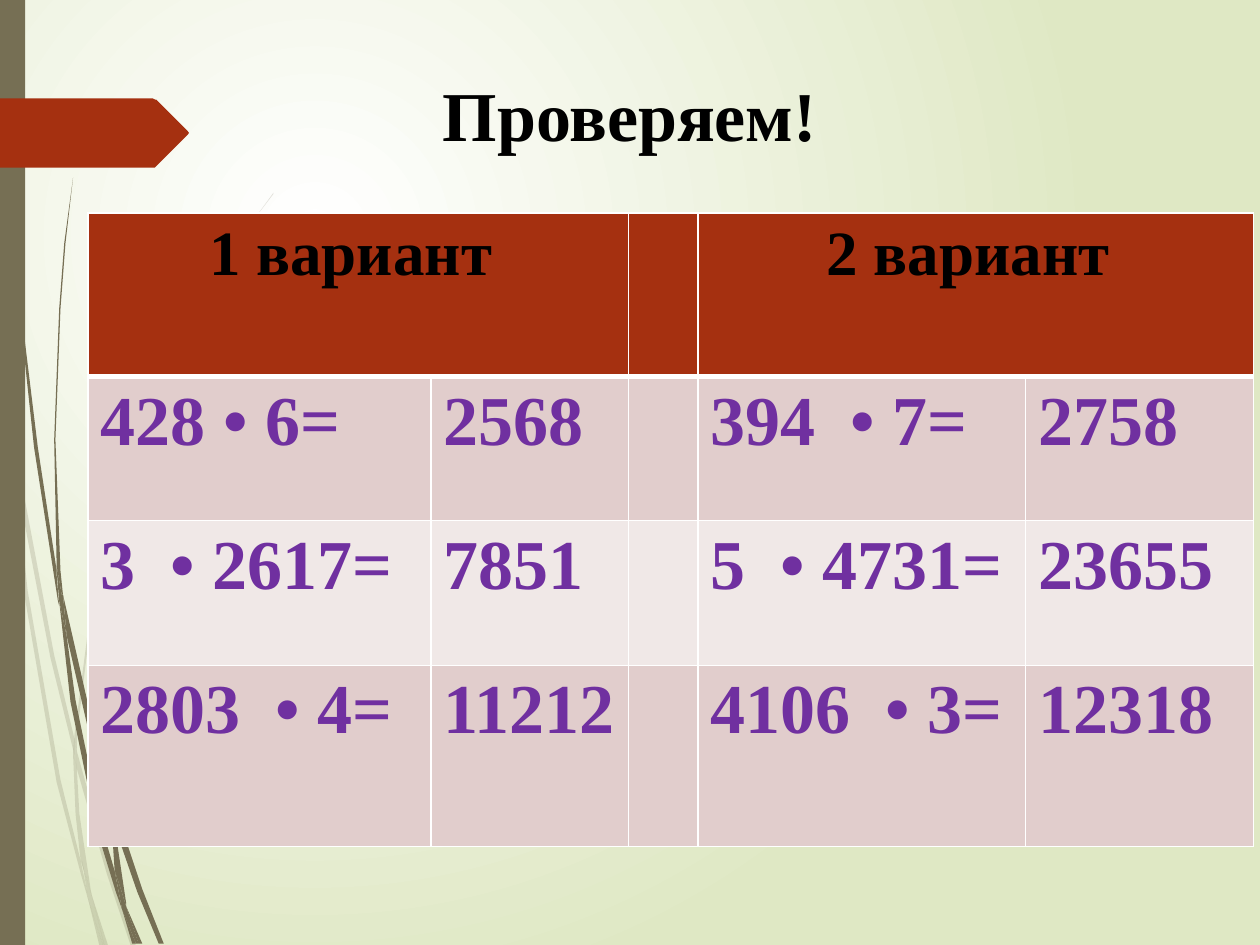
from dataclasses import dataclass

from lxml import etree
from pptx import Presentation
from pptx.dml.color import RGBColor
from pptx.enum.shapes import MSO_SHAPE
from pptx.enum.text import PP_ALIGN
from pptx.oxml.ns import qn
from pptx.util import Inches, Pt

RECTANGLE = MSO_SHAPE.RECTANGLE
CENTER = PP_ALIGN.CENTER
LEFT = PP_ALIGN.LEFT

FONT = "Times New Roman"
WHITE = "FFFFFF"
BLACK = "000000"
PALE_GREEN = "DFE8C4"
OLIVE = "766F54"
RUST = "A53010"
PURPLE = "7030A0"
BANDS = ("E1CDCC", "F0E8E7")


@dataclass(frozen=True)
class Outline:
    points: tuple
    color: str = OLIVE
    opacity: int = 100


@dataclass(frozen=True)
class Answer:
    task: str
    result: str


PALE_STEMS = (
    ((0.08, 3.5), (0.06, 3.22), (0, 2.82), (0, 2.99), (0.07, 3.44)),
    ((0.4, 5.22), (0.59, 5.99), (0.59, 5.86), (0.43, 5.2), (0.1, 3.45), (0.12, 3.76)),
    ((0.64, 6.07), (0.61, 5.96), (0.61, 6.1), (0.85, 6.94), (1.04, 7.51), (1.08, 7.51),
     (0.88, 6.92)),
    ((0.83, 7.51), (0.86, 7.51), (0.73, 7.11)),
    ((0.64, 6.83), (0.48, 6.19), (0.22, 4.69), (0.12, 3.76), (0.08, 3.5), (0.19, 4.7),
     (0.45, 6.21), (0.64, 6.93), (0.7, 7.14), (0.69, 7.07)),
    ((0.58, 5.99), (0.6, 6.46), (0.64, 6.83), (0.67, 6.92), (0.73, 7.11), (0.72, 7.06),
     (0.63, 6.46), (0.61, 6.1), (0.61, 6.08)),
    ((0.61, 5.84), (0.76, 4.62), (1.11, 3.49), (1.59, 2.45), (1.87, 1.98), (2.01, 1.75),
     (2.17, 1.54), (2.17, 1.53), (2.01, 1.75), (1.86, 1.97), (1.58, 2.44), (1.1, 3.48),
     (0.75, 4.61), (0.59, 5.84), (0.59, 5.86), (0.61, 5.96)),
    ((0.7, 7.14), (0.79, 7.51), (0.82, 7.51)),
    ((0.61, 6.08), (0.61, 6.1), (0.61, 5.96), (0.59, 5.86), (0.58, 5.99)),
    ((0.67, 6.92), (0.65, 6.83), (0.69, 7.07), (0.7, 7.14), (0.82, 7.51), (0.83, 7.51),
     (0.73, 7.11)),
)

DARK_STEMS = (
    ((0.05, 1.1), (0.14, 2.33), (0.27, 3.55), (0.46, 4.77), (0.47, 4.81), (0.45, 4.57),
     (0.45, 4.53), (0.3, 3.55), (0.15, 2.32), (0.06, 1.09), (0.04, 0.48), (0.03, 0),
     (0.02, 0), (0.03, 0.48)),
    ((0.73, 5.92), (0.88, 6.45), (0.88, 6.33), (0.88, 6.31), (0.77, 5.9), (0.5, 4.72),
     (0.53, 5.05)),
    ((0.94, 6.49), (0.91, 6.41), (0.91, 6.56), (1.09, 7.08), (1.26, 7.49), (1.3, 7.49),
     (1.13, 7.06)),
    ((0.91, 6.91), (0.81, 6.57), (0.6, 5.56), (0.53, 5.05), (0.47, 4.77), (0.56, 5.57),
     (0.77, 6.59), (0.92, 7.08), (0.97, 7.22), (0.96, 7.17)),
    ((0.5, 4.72), (0.48, 4.53), (0.44, 3.49), (0.48, 2.45), (0.52, 1.93), (0.58, 1.41),
     (0.51, 1.93), (0.47, 2.45), (0.43, 3.49), (0.45, 4.49), (0.49, 4.72)),
    ((1.1, 7.49), (1.13, 7.49), (1, 7.19)),
    ((0.47, 4.77), (0.53, 5.05), (0.5, 4.72), (0.49, 4.72), (0.45, 4.49), (0.45, 4.53)),
    ((0.97, 7.22), (1.05, 7.49), (1.08, 7.49)),
    ((0.88, 6.45), (0.91, 6.91), (0.96, 7.06), (1, 7.19), (1, 7.16), (0.91, 6.56),
     (0.9, 6.51)),
    ((0.96, 7.06), (0.91, 6.91), (0.96, 7.17), (0.97, 7.22), (1.08, 7.49), (1.1, 7.49),
     (1, 7.19)),
)

PAGE_TAG = Outline(
    ((1.49, 1.07), (1.24, 1.32), (1.23, 1.33), (1.21, 1.33), (0, 1.33), (0, 0.78),
     (1.21, 0.78), (1.23, 0.79), (1.24, 0.79), (1.49, 1.04), (1.5, 1.055)), RUST)

VARIANTS = {
    "1 вариант ": (Answer("428 • 6=", "2568"), Answer("3  • 2617=", "7851"),
                   Answer("2803  • 4=", "11212")),
    "2 вариант ": (Answer("394  • 7=", "2758"), Answer("5  • 4731=", "23655"),
                   Answer("4106  • 3=", "12318")),
}
COLUMN_WIDTHS = (2.72, 1.57, 0.55, 2.6, 1.81)
ROW_HEIGHTS = (1.3, 1.14, 1.15, 1.44)
VARIANT_STRIDE = 3


def rgb(color: str) -> RGBColor:
    return RGBColor.from_string(color)


def paint(shape, color: str) -> None:
    shape.fill.solid()
    shape.fill.fore_color.rgb = rgb(color)
    shape.line.fill.background()
    shape.shadow.inherit = False


def write(frame, text: str, *, size: int = 40, color: str = BLACK, align=LEFT) -> None:
    paragraph = frame.paragraphs[0]
    paragraph.alignment = align
    run = paragraph.add_run()
    run.text = text
    run.font.name = FONT
    run.font.size = Pt(size)
    run.font.bold = True
    run.font.color.rgb = rgb(color)


def draw_outline(slide, outline: Outline) -> None:
    start, *rest = [(Inches(x), Inches(y)) for x, y in outline.points]
    builder = slide.shapes.build_freeform(*start)
    builder.add_line_segments(rest, close=True)
    shape = builder.convert_to_shape()
    paint(shape, outline.color)
    if outline.opacity < 100:
        tint = shape.element.spPr.find(qn("a:solidFill"))[0]
        etree.SubElement(tint, qn("a:alpha"), val=str(outline.opacity * 1000))


def draw_background(slide) -> None:
    fill = slide.background.fill
    fill.gradient()
    for stop, color in zip(fill.gradient_stops, (WHITE, PALE_GREEN)):
        stop.color.rgb = rgb(color)
    gradient = slide.element.find(".//" + qn("a:gradFill"))
    gradient.remove(gradient.find(qn("a:lin")))
    glow = etree.SubElement(gradient, qn("a:path"))
    glow.set("path", "circle")
    etree.SubElement(glow, qn("a:fillToRect"), l="50000", t="50000", r="100000", b="100000")


def draw_borders(cell, top: int, bottom: int) -> None:
    properties = cell._tc.get_or_add_tcPr()
    for side, width in (("L", 1), ("R", 1), ("T", top), ("B", bottom)):
        border = etree.SubElement(properties, qn(f"a:ln{side}"), w=str(Pt(width)))
        solid = etree.SubElement(border, qn("a:solidFill"))
        etree.SubElement(solid, qn("a:srgbClr"), val=WHITE)


def draw_answers(slide) -> None:
    table = slide.shapes.add_table(
        len(ROW_HEIGHTS), len(COLUMN_WIDTHS), Inches(0.7), Inches(1.69),
        Inches(sum(COLUMN_WIDTHS)), Inches(sum(ROW_HEIGHTS))).table
    for column, width in zip(table.columns, COLUMN_WIDTHS):
        column.width = Inches(width)
    for index, (row, height) in enumerate(zip(table.rows, ROW_HEIGHTS)):
        row.height = Inches(height)
        for cell in row.cells:
            draw_borders(cell, 3 if index == 1 else 1, 3 if index == 0 else 1)
            cell.fill.solid()
            cell.fill.fore_color.rgb = rgb(BANDS[(index - 1) % 2] if index else RUST)
    for index, (heading, answers) in enumerate(VARIANTS.items()):
        first = index * VARIANT_STRIDE
        header = table.cell(0, first)
        header.merge(table.cell(0, first + 1))
        write(header.text_frame, heading, size=36, align=CENTER)
        for row, answer in enumerate(answers, start=1):
            write(table.cell(row, first).text_frame, answer.task, color=PURPLE)
            write(table.cell(row, first + 1).text_frame, answer.result, color=PURPLE)


def main() -> None:
    deck = Presentation()
    deck.slide_width, deck.slide_height = Inches(10), Inches(7.5)
    slide = deck.slides.add_slide(deck.slide_layouts[6])
    draw_background(slide)
    for points in PALE_STEMS:
        draw_outline(slide, Outline(points, opacity=20))
    for points in DARK_STEMS:
        draw_outline(slide, Outline(points))
    side_bar = slide.shapes.add_shape(RECTANGLE, 0, 0, Inches(0.2), deck.slide_height)
    paint(side_bar, OLIVE)
    draw_outline(slide, PAGE_TAG)
    title = slide.shapes.add_textbox(Inches(2.5), Inches(0.52), Inches(5), Inches(0.77))
    title.text_frame.word_wrap = True
    write(title.text_frame, "Проверяем!", align=CENTER)
    draw_answers(slide)
    deck.save("out.pptx")


if __name__ == "__main__":
    main()
